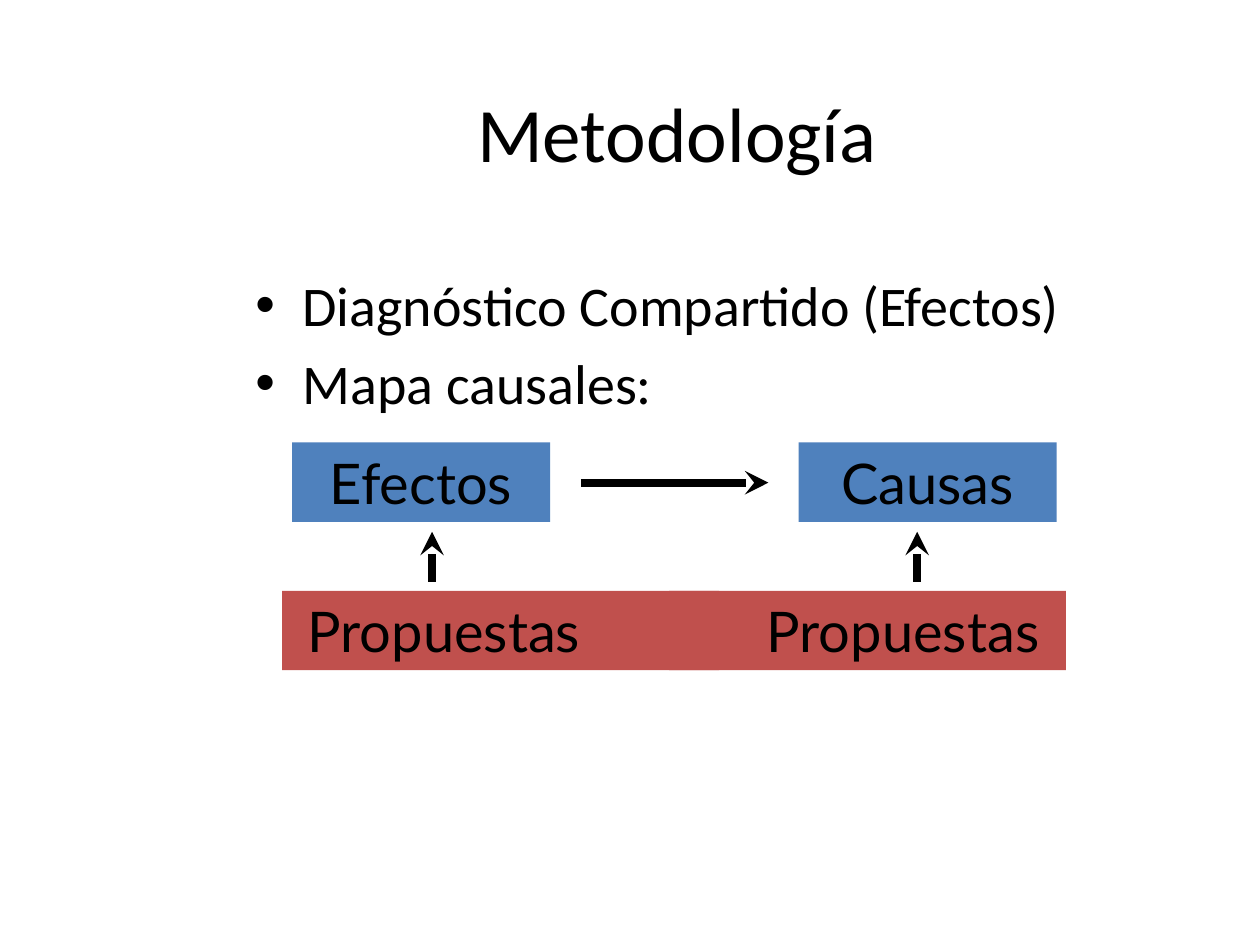
from pptx import Presentation
from pptx.dml.color import RGBColor
from pptx.enum.shapes import MSO_CONNECTOR as Link, MSO_SHAPE as Form
from pptx.enum.text import MSO_ANCHOR as Anchor, PP_ALIGN as Align
from pptx.oxml.ns import qn
from pptx.util import Cm, Pt
from lxml.etree import SubElement as Sub

BLACK = RGBColor(0x00, 0x00, 0x00)
BLUE = RGBColor(0x4F, 0x81, 0xBD)
RED = RGBColor(0xC0, 0x50, 0x4D)


def style(para, face, size, align):
    para.alignment = align
    para.font.color.rgb = BLACK
    for key, value in {"name": face, "size": Pt(size)}.items():
        setattr(para.font, key, value)


def frame(shape, form):
    for key, value in {"word_wrap": True, **form}.items():
        setattr(shape.text_frame, key, value)
    return shape.text_frame


deck = Presentation()
deck.slide_width, deck.slide_height = Cm(25.4), Cm(19.05)
slide = deck.slides.add_slide(deck.slide_layouts[6])
shapes = slide.shapes

title = shapes.add_textbox(Cm(4.09), Cm(1.52), Cm(19.48), Cm(2.26))
text = frame(title, {"vertical_anchor": Anchor.MIDDLE, "margin_right": Cm(0.61)})
text.text = "Metodología"
style(text.paragraphs[0], "Calibri", 44, Align.CENTER)

body = shapes.add_textbox(Cm(4.9), Cm(5.33), Cm(19.48), Cm(11.43))
text = frame(body, {"vertical_anchor": Anchor.TOP})
text.text = "Diagnóstico Compartido (Efectos)\nMapa causales:"
for row, para in enumerate(text.paragraphs):
    props = para._p.get_or_add_pPr()
    for key, value in {"marL": Cm(0.95), "indent": -Cm(0.95)}.items():
        props.set(key, str(value))
    Sub(props, qn("a:buFont"), typeface="Arial")
    Sub(props, qn("a:buChar"), char="•")
    style(para, "Calibri", 32, Align.LEFT)
    if row:
        para.space_before = Pt(6)

boxes = [
    ("Efectos", 5.89, 8.92, 5.2, BLUE, Align.CENTER, 0.25),
    ("Causas", 16.1, 8.92, 5.2, BLUE, Align.CENTER, 0.25),
    ("Propuestas", 5.69, 11.91, 8.81, RED, Align.LEFT, 0.51),
    ("Propuestas", 13.49, 11.91, 8.0, RED, Align.CENTER, 1.68),
]
for words, left, top, width, fill, align, inset in boxes:
    box = shapes.add_shape(Form.RECTANGLE, Cm(left), Cm(top), Cm(width), Cm(1.6))
    box.shadow.inherit = False
    box.fill.solid()
    box.fill.fore_color.rgb = fill
    box.line.fill.background()
    text = frame(box, {"vertical_anchor": Anchor.TOP, "margin_left": Cm(inset)})
    text.text = words
    style(text.paragraphs[0], "Lato", 32, align)

arrows = [
    (8.71, 11.73, 8.71, 10.72),
    (18.49, 11.73, 18.49, 10.72),
    (11.71, 9.73, 15.49, 9.73),
]
for ends in arrows:
    arrow = shapes.add_connector(Link.STRAIGHT, *map(Cm, ends))
    arrow.line.width = Pt(4.5)
    arrow.line.color.rgb = BLACK
    Sub(arrow.line._get_or_add_ln(), qn("a:tailEnd"), type="stealth")
    Sub(arrow._element.spPr, qn("a:effectLst"))

deck.save("out.pptx")
